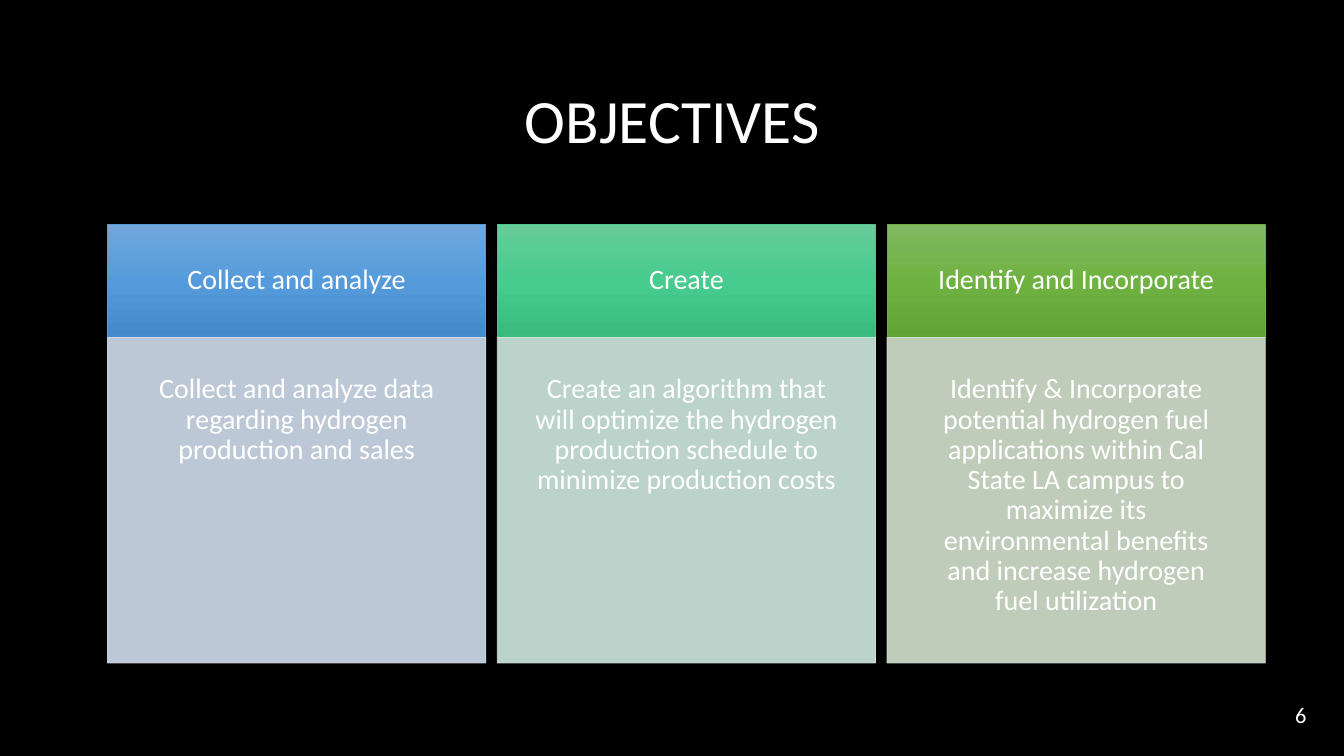
from copy import deepcopy

from pptx import Presentation
from pptx.dml.color import RGBColor
from pptx.enum.shapes import MSO_SHAPE
from pptx.enum.text import MSO_ANCHOR, PP_ALIGN
from pptx.oxml.ns import qn
from pptx.util import Inches, Pt

RECT = MSO_SHAPE.RECTANGLE
TOP, MID = MSO_ANCHOR.TOP, MSO_ANCHOR.MIDDLE
MIDDLE, RIGHT = PP_ALIGN.CENTER, PP_ALIGN.RIGHT


def rgb(code):
    return RGBColor.from_string(code)


class Deck:
    """Style and current slide; boxes are in percent of the slide's size."""
    font = "Calibri"
    ink = "FFFFFF"
    back = "000000"
    alpha = 90

    def __init__(self):
        self.prs = Presentation()
        self.prs.slide_width = Inches(13.33)
        self.prs.slide_height = Inches(7.5)
        self.slide = self.prs.slides.add_slide(self.prs.slide_layouts[6])
        fill = self.slide.background.fill
        fill.solid()
        fill.fore_color.rgb = rgb(self.back)

    def place(self, box):
        wide, high = self.prs.slide_width, self.prs.slide_height
        return [int(part * side / 100)
                for part, side in zip(box, (wide, high, wide, high))]

    def letter(self, shape, text, size, align=MIDDLE, anchor=MID,
               inset=None, lead=0.9):
        frame = shape.text_frame
        frame.word_wrap = True
        frame.vertical_anchor = anchor
        if inset is not None:
            frame.margin_left = frame.margin_right = Inches(inset)
            frame.margin_top = frame.margin_bottom = Inches(inset)
        para = frame.paragraphs[0]
        para.text = text
        para.alignment = align
        para.line_spacing = lead
        para.font.name = self.font
        para.font.size = Pt(size)
        para.font.color.rgb = rgb(self.ink)

    def label(self, box, text, size, **style):
        self.letter(self.slide.shapes.add_textbox(*self.place(box)),
                    text, size, **style)

    def panel(self, box, edge):
        shape = self.slide.shapes.add_shape(RECT, *self.place(box))
        shape.shadow.inherit = False
        shape.line.color.rgb = rgb(edge)
        shape.line.width = Pt(0.5)
        return shape

    def header(self, box, text, edge, shades):
        shape = self.panel(box, edge)
        fill = shape.fill
        fill.gradient()
        fill.gradient_angle = 270
        # A third stop for the middle shade
        stops = shape._element.spPr.find(".//" + qn("a:gsLst"))
        stops.append(deepcopy(stops[0]))
        for stop, spot, shade in zip(fill.gradient_stops, (0, 0.5, 1), shades):
            stop.position = spot
            stop.color.rgb = rgb(shade)
        self.letter(shape, text, 20, inset=0.3)

    def body(self, box, text, tint):
        shape = self.panel(box, tint)
        shape.fill.solid()
        shape.fill.fore_color.rgb = rgb(tint)
        # Fill and line are slightly see-through
        for node in shape._element.spPr.findall(".//" + qn("a:srgbClr")):
            alpha = node.makeelement(qn("a:alpha"),
                                     {"val": str(self.alpha * 1000)})
            node.append(alpha)
        self.letter(shape, text, 20, anchor=TOP, inset=0.37)


CARDS = [
    ("Collect and analyze",
     "Collect and analyze data regarding hydrogen production and sales",
     "5B9BD5", ("71A6DB", "559BDB", "448ACA"), "D2DEEF"),
    ("Create",
     "Create an algorithm that will optimize the hydrogen production "
     "schedule to minimize production costs",
     "4DC58D", ("67CC9A", "47CB8E", "39BB7F"), "D0EAE1"),
    ("Identify and Incorporate",
     "Identify & Incorporate potential hydrogen fuel applications within "
     "Cal State LA campus to maximize its environmental benefits and "
     "increase hydrogen fuel utilization",
     "70AD47", ("81B861", "6FB242", "62A336"), "D5E3CF"),
]
LEFT, STEP, WIDE = 8, 29, 28.15


def main():
    deck = Deck()

    # Title
    deck.label((6.9, 8.13, 86.25, 16.53), "OBJECTIVES", 44)

    # Three cards, each a header over a body
    for col, (head, text, edge, shades, tint) in enumerate(CARDS):
        left = LEFT + col * STEP
        deck.header((left, 29.63, WIDE, 15), head, edge, shades)
        deck.body((left, 44.63, WIDE, 43.07), text, tint)

    # Slide number
    deck.label((75.45, 91.87, 22.5, 5.33), "6", 16, align=RIGHT, lead=1.0)

    deck.prs.save("out.pptx")


if __name__ == "__main__":
    main()
